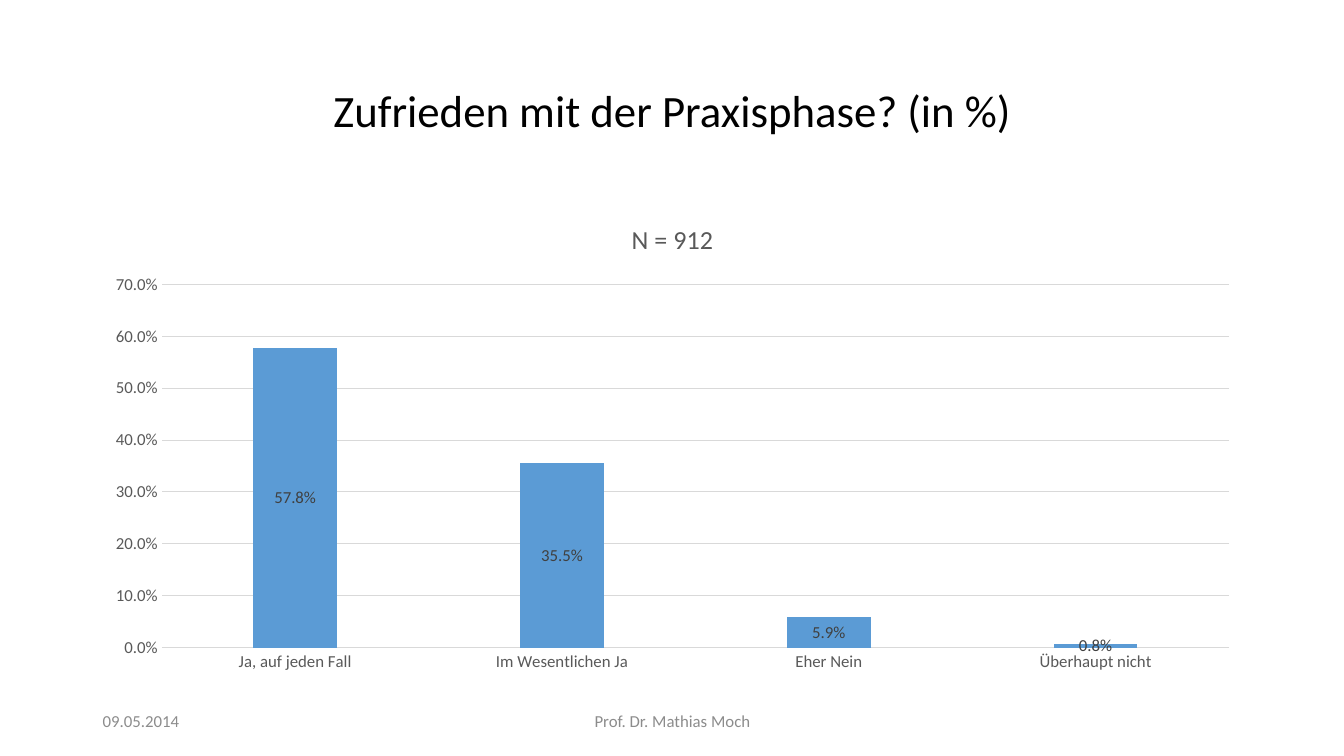
from pptx import Presentation
from pptx import util as u
from pptx.chart.data import CategoryChartData
from pptx.dml.color import RGBColor
from pptx.enum import chart as charts, text

PX = 9144  # EMU per px, 100 px to the inch
FONT = "Calibri"
BLACK = RGBColor(0x00, 0x00, 0x00)
LABEL = RGBColor(0x40, 0x40, 0x40)
AXIS = RGBColor(0x59, 0x59, 0x59)
FOOTER = RGBColor(0x8C, 0x8C, 0x8C)
GRID = RGBColor(0xD9, 0xD9, 0xD9)
BAR = RGBColor(0x5B, 0x9B, 0xD5)
PERCENT = "0.0%"

ANSWERS = {
    "Ja, auf jeden Fall": 0.578,
    "Im Wesentlichen Ja": 0.355,
    "Eher Nein": 0.059,
    "Überhaupt nicht": 0.008,
}


def px(*lengths):
    return [u.Emu(length * PX) for length in lengths]


def style_font(font, size, color):
    font.name = FONT
    font.size = u.Pt(size)
    font.bold = False
    font.color.rgb = color


def style_line(line):
    line.color.rgb = GRID
    line.width = u.Pt(0.75)


def write_line(frame, words, size, color, align):
    frame.word_wrap = True
    frame.auto_size = text.MSO_AUTO_SIZE.NONE
    frame.vertical_anchor = text.MSO_ANCHOR.MIDDLE
    para = frame.paragraphs[0]
    para.alignment = align
    span = para.add_run()
    span.text = words
    style_font(span.font, size, color)
    return para


def add_title(page, words):
    title = page.shapes.title
    title.left, title.top, title.width, title.height = px(92, 40, 1150, 145)
    para = write_line(title.text_frame, words, 32, BLACK, text.PP_ALIGN.CENTER)
    para.line_spacing = 0.9


def add_footer(page, words, left, width, align):
    box = page.shapes.add_textbox(*px(left, 695, width, 40))
    write_line(box.text_frame, words, 12, FOOTER, align)


def style_axis(axis):
    axis.major_tick_mark = charts.XL_TICK_MARK.NONE
    axis.minor_tick_mark = charts.XL_TICK_MARK.NONE
    style_font(axis.tick_labels.font, 12, AXIS)


def add_bar_chart(page, heading, answers):
    data = CategoryChartData(number_format=PERCENT)
    data.categories = list(answers)
    data.add_series("Series 1", list(answers.values()))
    chart = page.shapes.add_chart(
        charts.XL_CHART_TYPE.COLUMN_CLUSTERED, *px(92, 200, 1150, 476), data).chart
    style_font(chart.font, 10, BLACK)
    chart.has_legend = False

    # Chart heading
    chart.has_title = True
    span = chart.chart_title.text_frame.paragraphs[0].add_run()
    span.text = heading
    style_font(span.font, 18.6, AXIS)
    chart.chart_title.include_in_layout = False

    # Axes
    style_axis(chart.category_axis)
    style_line(chart.category_axis.format.line)
    values = chart.value_axis
    style_axis(values)
    values.format.line.fill.background()
    values.minimum_scale, values.maximum_scale, values.major_unit = 0, 0.7, 0.1
    values.has_major_gridlines = True
    style_line(values.major_gridlines.format.line)
    values.tick_labels.number_format = PERCENT
    values.tick_labels.number_format_is_linked = False

    # Bars and their labels
    plot = chart.plots[0]
    plot.gap_width, plot.overlap = 219, -27
    plot.vary_by_categories = False
    bars = plot.series[0]
    bars.format.fill.solid()
    bars.format.fill.fore_color.rgb = BAR
    labels = bars.data_labels
    labels.show_value = True
    labels.position = charts.XL_LABEL_POSITION.CENTER
    labels.number_format = PERCENT
    labels.number_format_is_linked = False
    style_font(labels.font, 12, LABEL)


def main():
    deck = Presentation()
    deck.slide_width, deck.slide_height = px(1333, 750)
    page = deck.slides.add_slide(deck.slide_layouts[5])
    add_title(page, "Zufrieden mit der Praxisphase? (in %)")
    add_bar_chart(page, "N = 912", ANSWERS)
    add_footer(page, "09.05.2014", 92, 300, text.PP_ALIGN.LEFT)
    add_footer(page, "Prof. Dr. Mathias Moch", 442, 450, text.PP_ALIGN.CENTER)
    deck.save("out.pptx")


if __name__ == "__main__":
    main()
